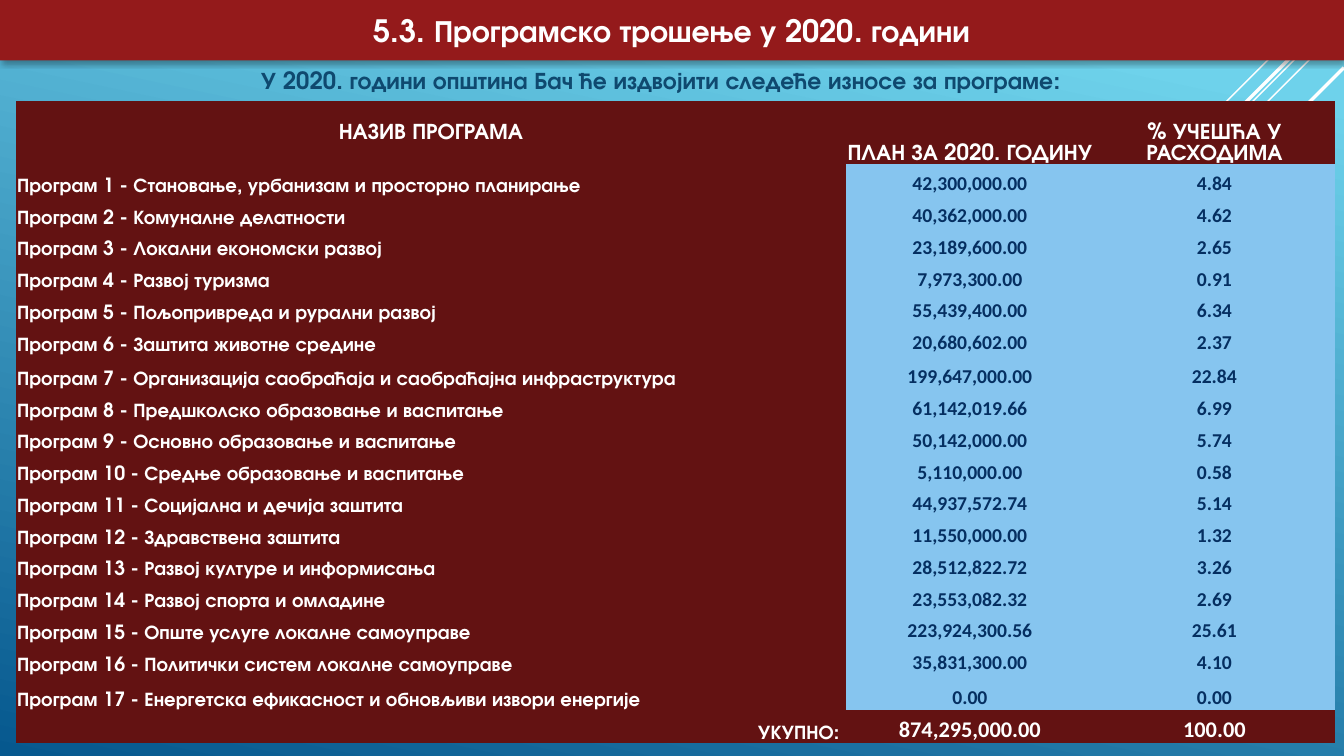
from lxml import etree
from pptx import Presentation
from pptx.dml.color import RGBColor as RGB
from pptx.enum.shapes import MSO_CONNECTOR as CONN
from pptx.enum.text import MSO_ANCHOR as ANCHOR, MSO_AUTO_SIZE as AUTO, PP_ALIGN as ALIGN
from pptx.oxml import parse_xml
from pptx.oxml.ns import nsdecls, qn
from pptx.util import Inches, Pt

C = {"white": "FFFFFF", "sky": "6ED2EB", "deep": "06588E", "red": "941A1B",
     "maroon": "631212", "blue": "86C5EF", "navy": "052F61", "subtitle": "0F496F"}
HEAD, NUM = "TeX Gyre Adventor", "Calibri"


def color(name):
    return RGB.from_string(C[name])


def style(p, text, size, font, fill, align):
    p.text = text
    p.alignment = align
    p.font.size = Pt(size)
    p.font.name = font
    p.font.bold = True
    p.font.color.rgb = color(fill)


prs = Presentation()
prs.slide_width, prs.slide_height = Inches(13.33), Inches(7.5)
W, H = prs.slide_width, prs.slide_height
s = prs.slides.add_slide(prs.slide_layouts[0])

bg = s.background.fill
bg.gradient()
bg.gradient_angle = 258
for stop, pos, name in zip(bg.gradient_stops, (0.1, 1), ("sky", "deep")):
    stop.position = pos
    stop.color.rgb = color(name)

rays = [(13.16, 0.01, 4.16, 1), (13.33, 0.1, 6.65, 1), (13.33, 0.25, 5.42, 1),
        (13.33, 0.04, 5.31, 2.5), (13.33, 0.67, 4.75, 2.5)]
for i, (x, y, run, width) in enumerate(rays):
    ray = s.shapes.add_connector(CONN.STRAIGHT, Inches(x), Inches(y),
                                 Inches(x - run), Inches(y + run))
    ray.line.color.rgb = color("white")
    ray.line.width = Pt(width)
    etree.SubElement(ray._element.spPr, qn("a:effectLst"))
    s.shapes._spTree.insert(2 + i, ray._element)

sub = s.placeholders[1]
sub.left, sub.top, sub.width, sub.height = (
    int(W * 0.126), int(H * 0.08), int(W * 0.731), int(H * 0.073))
sub.text_frame.auto_size = AUTO.NONE
p = sub.text_frame.paragraphs[0]
style(p, "У 2020. години општина Бач ће издвојити следеће износе за програме:",
      17, HEAD, "subtitle", ALIGN.CENTER)
p.space_after = Pt(6)

title = s.shapes.title
title.left, title.top, title.width, title.height = 0, 0, W, int(H * 0.08)
spPr = title._element.spPr
spPr.append(parse_xml(f'<a:prstGeom {nsdecls("a")} prst="roundRect"><a:avLst/></a:prstGeom>'))
title.fill.solid()
title.fill.fore_color.rgb = color("red")
title.line.fill.background()
spPr.append(parse_xml(
    f'<a:effectLst {nsdecls("a")}><a:outerShdw blurRad="{Pt(3.5)}" dist="{Pt(2.2)}" '
    'dir="5400000" rotWithShape="0"><a:srgbClr val="000000"><a:alpha val="32000"/>'
    '</a:srgbClr></a:outerShdw></a:effectLst>'))
tf = title.text_frame
tf.auto_size = AUTO.NONE
tf.vertical_anchor = ANCHOR.MIDDLE
style(tf.paragraphs[0], "5.3. Програмско трошење у 2020. години",
      22, HEAD, "white", ALIGN.CENTER)
s.shapes._spTree.append(title._element)

programs = [
    ("Становање, урбанизам и просторно планирање", "42,300,000.00", "4.84"),
    ("Комуналне делатности", "40,362,000.00", "4.62"),
    ("Локални економски развој", "23,189,600.00", "2.65"),
    ("Развој туризма", "7,973,300.00", "0.91"),
    ("Пољопривреда и рурални развој", "55,439,400.00", "6.34"),
    ("Заштита животне средине", "20,680,602.00", "2.37"),
    ("Организација саобраћаја и саобраћајна инфраструктура", "199,647,000.00", "22.84"),
    ("Предшколско образовање и васпитање", "61,142,019.66", "6.99"),
    ("Основно образовање и васпитање", "50,142,000.00", "5.74"),
    ("Средње образовање и васпитање", "5,110,000.00", "0.58"),
    ("Социјална и дечија заштита", "44,937,572.74", "5.14"),
    ("Здравствена заштита", "11,550,000.00", "1.32"),
    ("Развој културе и информисања", "28,512,822.72", "3.26"),
    ("Развој спорта и омладине", "23,553,082.32", "2.69"),
    ("Опште услуге локалне самоуправе", "223,924,300.56", "25.61"),
    ("Политички систем локалне самоуправе", "35,831,300.00", "4.10"),
    ("Енергетска ефикасност и обновљиви извори енергије", "0.00", "0.00"),
]
rows = [("НАЗИВ ПРОГРАМА", "ПЛАН ЗА 2020. ГОДИНУ", "% УЧЕШЋА У РАСХОДИМА")]
rows += [(f"Програм {n} - {name}", plan, share)
         for n, (name, plan, share) in enumerate(programs, 1)]
rows.append(("УКУПНО: ", "874,295,000.00", "100.00"))
last = len(rows) - 1
heights = {0: 0.63, 7: 0.34, 17: 0.35, last: 0.33}

frame = s.shapes.add_table(len(rows), 3, int(W * 0.012), int(H * 2 / 15),
                           Inches(13.08), Inches(6.37))
table = frame.table
table.first_row = table.horz_banding = False
table._tbl.tblPr.find(qn("a:tableStyleId")).text = "{2D5ABB26-0587-4C30-8999-92F81FD0307C}"
for col, width in zip(table.columns, (8.23, 2.46, 2.39)):
    col.width = Inches(width)

for r, values in enumerate(rows):
    table.rows[r].height = Inches(heights.get(r, 0.315))
    for c, text in enumerate(values):
        cell = table.cell(r, c)
        cell.margin_left = cell.margin_right = cell.margin_top = Inches(0.01)
        cell.margin_bottom = 0
        cell.vertical_anchor = ANCHOR.MIDDLE if r == c == 0 else ANCHOR.BOTTOM
        value = c > 0 and 0 < r < last
        cell.fill.solid()
        cell.fill.fore_color.rgb = color("blue" if value else "maroon")
        if r == 0 or c > 0:
            align = ALIGN.CENTER
        else:
            align = ALIGN.RIGHT if r == last else ALIGN.LEFT
        size = 16 if r == 0 or (r == last and c > 0) else 14
        style(cell.text_frame.paragraphs[0], text, size,
              NUM if r > 0 and c > 0 else HEAD, "navy" if value else "white", align)

prs.save("out.pptx")
